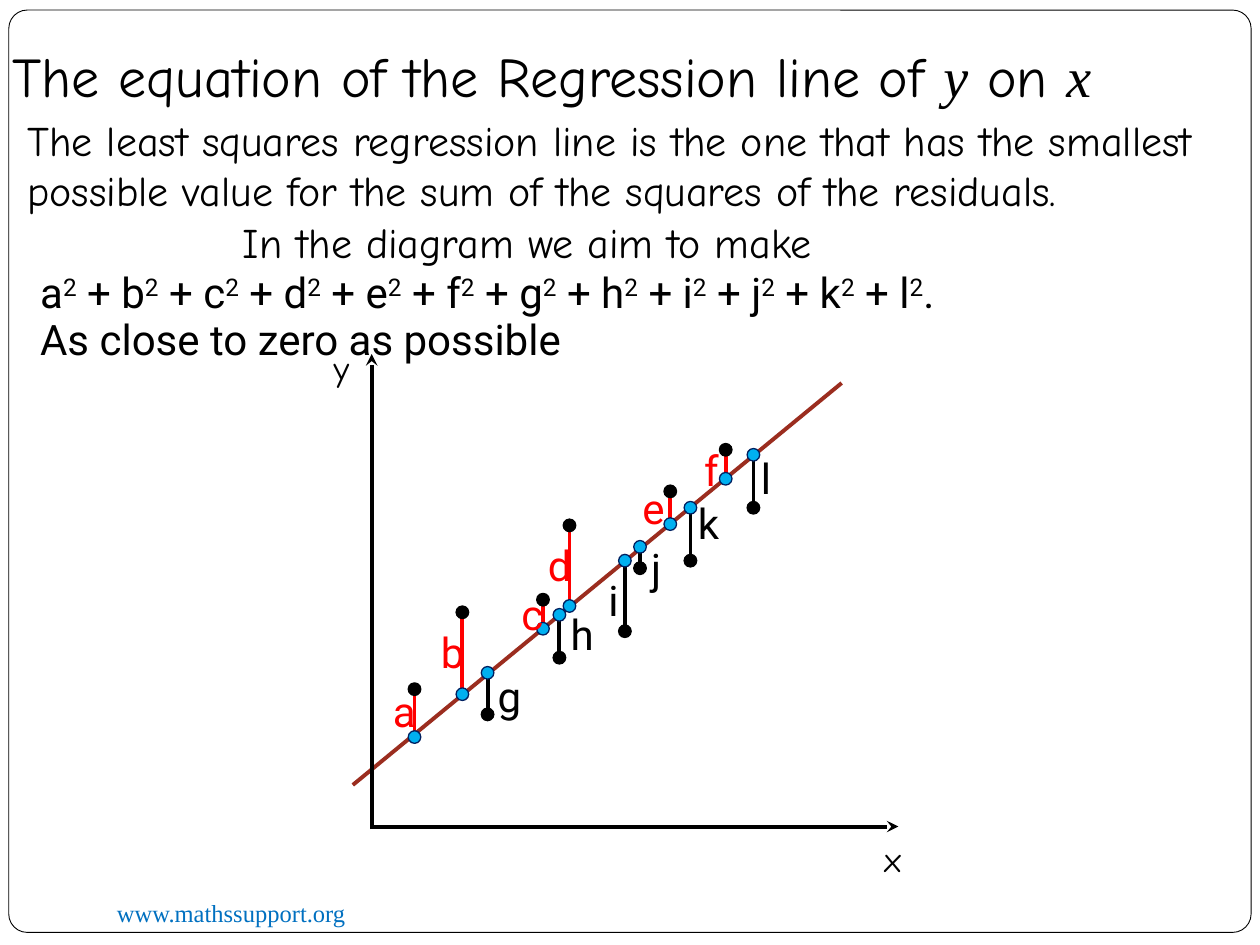
from lxml import etree
from pptx import Presentation
from pptx import util as u
from pptx.dml.color import RGBColor
from pptx.enum import shapes, text
from pptx.oxml.ns import qn

PX = u.Inches(1) // 100
COLORS = {"black": "000000", "white": "FFFFFF", "red": "FF0000", "brown": "9B2D1F",
          "sky": "00B0F0", "navy": "002060", "link": "0070C0"}
HAND, SANS, SERIF = "Comic Neue", "Roboto", "Times New Roman"
DOT = 10
LABEL_HEIGHT = 50

TITLE = [("The equation of the Regression line of ", HAND), ("y", SERIF),
         (" on ", HAND), ("x", SERIF)]
# text, box, format
TEXTS = [
    ("www.mathssupport.org", (83, 708, 325, 34), dict(font=SERIF, size=14, color="link")),
    ("The least squares regression line is the one that has the smallest possible "
     "value for the sum of the squares of the residuals.", (12, 86, 960, 131), {}),
    ("In the diagram we aim to make", (183, 167, 535, 50), {}),
    ("As close to zero as possible", (22, 244, 507, 50), dict(font=SANS)),
    ("x", (692, 660, 57, 43), dict(size=20)),
    ("y", (255, 270, 57, 43), dict(size=20)),
]
SUM_BOX = (22, 207, 885, 50)
REGRESSION = (280, 623, 668, 304)
AXES = [(295, 656, 713, 656), (295, 658, 295, 281)]
# letter, x, observed y, fitted y, label left, label top, label width
RESIDUALS = [
    ("a", 329, 547, 585, 302, 539, 32),
    ("b", 367, 486, 551, 340, 492, 34),
    ("c", 431, 476, 499, 404, 462, 31),
    ("d", 452, 417, 481, 425, 423, 34),
    ("e", 532, 390, 416, 500, 378, 32),
    ("f", 576, 357, 380, 549, 348, 28),
    ("g", 387, 567, 534, 385, 527, 32),
    ("h", 444, 522, 488, 443, 478, 34),
    ("i", 496, 501, 445, 473, 451, 27),
    ("j", 508, 451, 434, 507, 426, 27),
    ("k", 548, 445, 403, 544, 390, 32),
    ("l", 598, 403, 361, 594, 354, 27),
]


def rgb(name):
    return RGBColor.from_string(COLORS[name])


def emu(lengths):
    return [length * PX for length in lengths]


def add_span(para, words, font=HAND, size=24, color="black", italic=False, raised=False):
    span = para.add_run()
    span.text = words
    span.font.name, span.font.size = font, u.Pt(size)
    span.font.color.rgb = rgb(color)
    if italic:
        span.font.italic = True
    if raised:
        span._r.get_or_add_rPr().set("baseline", "30000")


def add_box(place, wrap=True):
    """Add a text box and return its first paragraph."""
    frame = page.shapes.add_textbox(*emu(place)).text_frame
    frame.word_wrap = wrap
    frame.auto_size = text.MSO_AUTO_SIZE.SHAPE_TO_FIT_TEXT
    return frame.paragraphs[0]


def add_text(words, place, wrap=True, **style):
    add_span(add_box(place, wrap), words, **style)


def add_line(ends, color="black", arrow=False):
    line = page.shapes.add_connector(shapes.MSO_CONNECTOR.STRAIGHT, *emu(ends))
    line.line.color.rgb = rgb(color)
    line.line.width = u.Pt(2.25)
    if arrow:
        etree.SubElement(line.line._get_or_add_ln(), qn("a:tailEnd"), type="stealth")
    etree.SubElement(line._element.spPr, qn("a:effectLst"))


def add_shape(kind, place, fill, outline, width):
    shape = page.shapes.add_shape(kind, *emu(place))
    shape.shadow.inherit = False
    shape.fill.solid()
    shape.fill.fore_color.rgb = rgb(fill)
    shape.line.color.rgb = rgb(outline)
    shape.line.width = u.Pt(width)
    return shape


def add_dot(x, y, fill, outline):
    add_shape(shapes.MSO_SHAPE.OVAL, (x - DOT / 2, y - DOT / 2, DOT, DOT),
              fill, outline, 0.75)


def add_title():
    title = page.shapes.title
    title.left, title.top, title.width, title.height = emu((0, 15, 972, 81))
    frame = title.text_frame
    frame.vertical_anchor = text.MSO_ANCHOR.BOTTOM
    frame.auto_size = text.MSO_AUTO_SIZE.NONE
    frame.margin_bottom = 10 * PX
    para = frame.paragraphs[0]
    para.alignment = text.PP_ALIGN.LEFT
    for words, font in TITLE:
        add_span(para, words, font=font, size=32, italic=font == SERIF)


def add_sum_of_squares():
    para = add_box(SUM_BOX)
    for index, (letter, *_) in enumerate(RESIDUALS):
        add_span(para, f" + {letter}" if index else letter, font=SANS)
        add_span(para, "2", font=SANS, raised=True)
    add_span(para, ".", font=SANS)


def add_diagram():
    add_line(REGRESSION, "brown")
    for axis in AXES:
        add_line(axis, arrow=True)
    for letter, x, observed, fitted, left, top, width in RESIDUALS:
        color = "red" if observed < fitted else "black"
        add_line((x, observed, x, fitted), color)
        add_dot(x, observed, "black", "black")
        add_dot(x, fitted, "sky", "navy")
        add_text(letter, (left, top, width, LABEL_HEIGHT), wrap=False,
                 font=SANS, color=color)


deck = Presentation()
deck.slide_width, deck.slide_height = emu((1000, 750))
page = deck.slides.add_slide(deck.slide_layouts[5])

border = add_shape(shapes.MSO_SHAPE.ROUNDED_RECTANGLE, (7, 8, 986, 732),
                   "white", "black", 0.5)
border.adjustments[0] = 0.02
page.shapes._spTree.insert(2, border._element)  # behind the title

add_title()
add_diagram()
for words, place, style in TEXTS:
    add_text(words, place, **style)
add_sum_of_squares()
deck.save("out.pptx")
